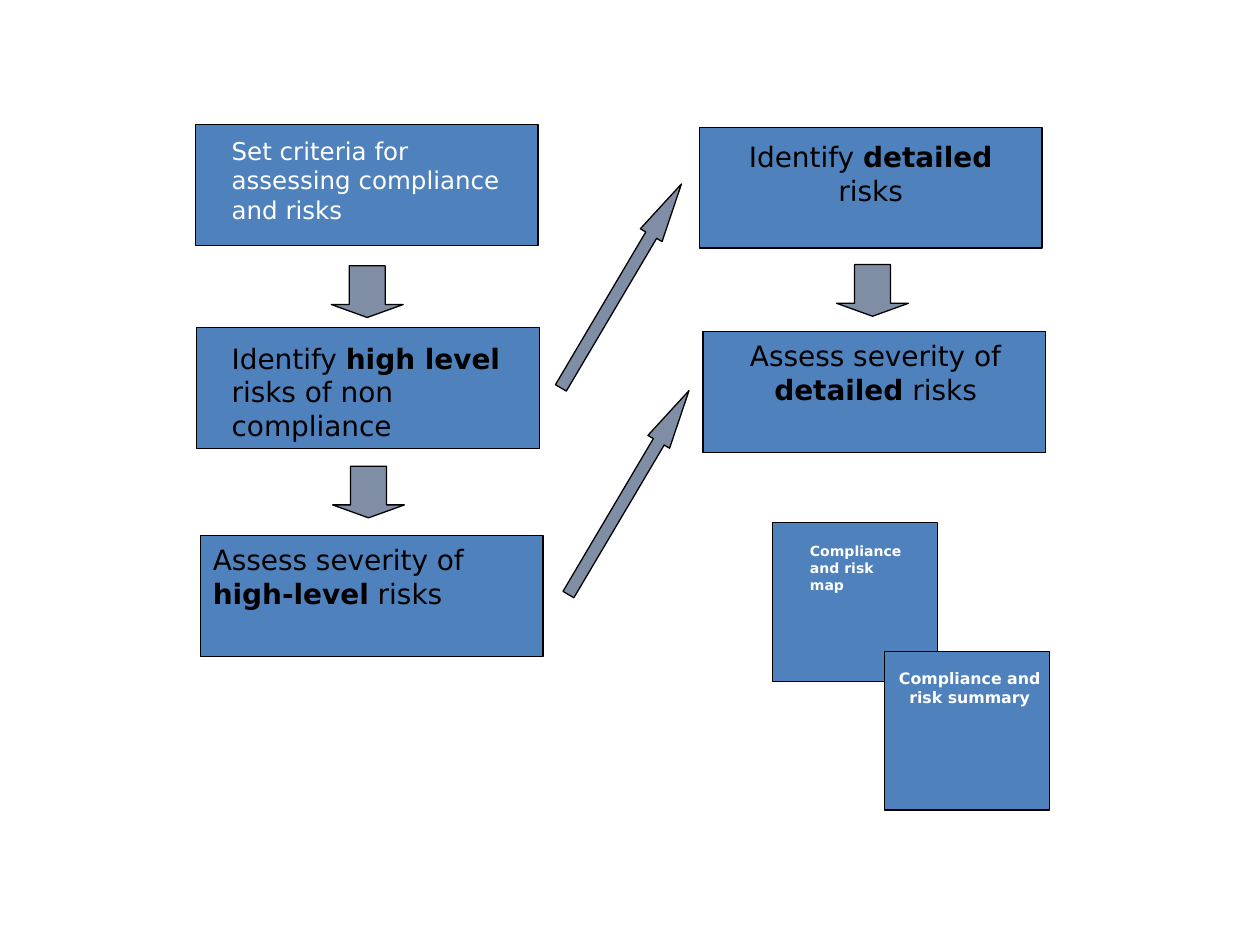
from pptx import Presentation
from pptx.dml.color import RGBColor
from pptx.enum.shapes import MSO_SHAPE
from pptx.enum.text import MSO_ANCHOR, MSO_AUTO_SIZE, PP_ALIGN
from pptx.util import Inches, Pt

FONT = "DejaVu Sans"
BLUE, GREY, BLACK, WHITE = "4F81BD", "7F8EA5", "000000", "FFFFFF"
STEP = (2.72, 0.96)
SHEET = (1.31, 1.26)
LEFT, MID = PP_ALIGN.LEFT, PP_ALIGN.CENTER


def paint(colour, value):
    colour.rgb = RGBColor.from_string(value)


def add_shape(slide, kind, spot, size, fill):
    shape = slide.shapes.add_shape(kind, *map(Inches, spot + size))
    shape.shadow.inherit = False
    shape.fill.solid()
    paint(shape.fill.fore_color, fill)
    paint(shape.line.color, BLACK)
    shape.line.width = Pt(0.75)
    return shape


def add_text(slide, area, parts, size, colour, align):
    """Write parts, a list of (words, bold) pairs, as one paragraph."""
    frame = slide.shapes.add_textbox(*map(Inches, area)).text_frame
    look = {
        "word_wrap": True,
        "auto_size": MSO_AUTO_SIZE.SHAPE_TO_FIT_TEXT,
        "vertical_anchor": MSO_ANCHOR.TOP,
    }
    for name, value in look.items():
        setattr(frame, name, value)
    para = frame.paragraphs[0]
    para.alignment = align
    for words, bold in parts:
        run = para.add_run()
        run.text = words
        style = {"name": FONT, "size": Pt(size), "bold": bold}
        for name, value in style.items():
            setattr(run.font, name, value)
        paint(run.font.color, colour)


def add_box(slide, spot, box, area, parts, size, colour, align):
    add_shape(slide, MSO_SHAPE.RECTANGLE, spot, box, BLUE)
    add_text(slide, area, parts, size, colour, align)


def add_arrow(slide, kind, spot, size, head, turn=0):
    arrow = add_shape(slide, kind, spot, size, GREY)
    arrow.adjustments[0] = 0.5
    arrow.adjustments[1] = head
    arrow.rotation = turn


def main():
    deck = Presentation()
    deck.slide_width, deck.slide_height = Inches(10), Inches(7.5)
    slide = deck.slides.add_slide(deck.slide_layouts[6])

    boxes = [
        ((1.59, 4.25), STEP, (1.59, 4.26, 2.75, 0.64),
         [("Assess severity of ", False), ("high-level", True),
          (" risks", False)], 16, BLACK, LEFT),
        ((1.56, 2.6), STEP, (1.74, 2.66, 2.34, 0.91),
         [("Identify ", False), ("high level", True),
          (" risks of non compliance", False)], 16, BLACK, LEFT),
        ((1.55, 0.99), STEP, (1.74, 1.03, 2.34, 0.82),
         [("Set criteria for assessing compliance and risks", False)],
         14, WHITE, LEFT),
        ((5.55, 1.01), STEP, (5.74, 1.06, 2.34, 0.64),
         [("Identify ", False), ("detailed", True), (" risks", False)],
         16, BLACK, MID),
        ((5.58, 2.63), STEP, (5.78, 2.64, 2.34, 0.64),
         [("Assess severity of ", False), ("detailed", True),
          (" risks", False)], 16, BLACK, MID),
        ((6.13, 4.15), SHEET, (6.33, 4.26, 0.93, 0.51),
         [("Compliance and risk map", True)], 8, WHITE, LEFT),
        ((7.02, 5.17), SHEET, (6.94, 5.26, 1.51, 0.4),
         [("Compliance and risk summary", True)], 9, WHITE, MID),
    ]
    for box in boxes:
        add_box(slide, *box)

    for spot in [(2.63, 2.11), (6.64, 2.1), (2.64, 3.7)]:
        add_arrow(slide, MSO_SHAPE.DOWN_ARROW, spot, (0.57, 0.41), 0.25)
    for spot in [(4.83, 1.33), (4.89, 2.97)]:
        add_arrow(slide, MSO_SHAPE.UP_ARROW, spot, (0.2, 1.88), 2.36, 30.6)

    deck.save("out.pptx")


if __name__ == "__main__":
    main()
